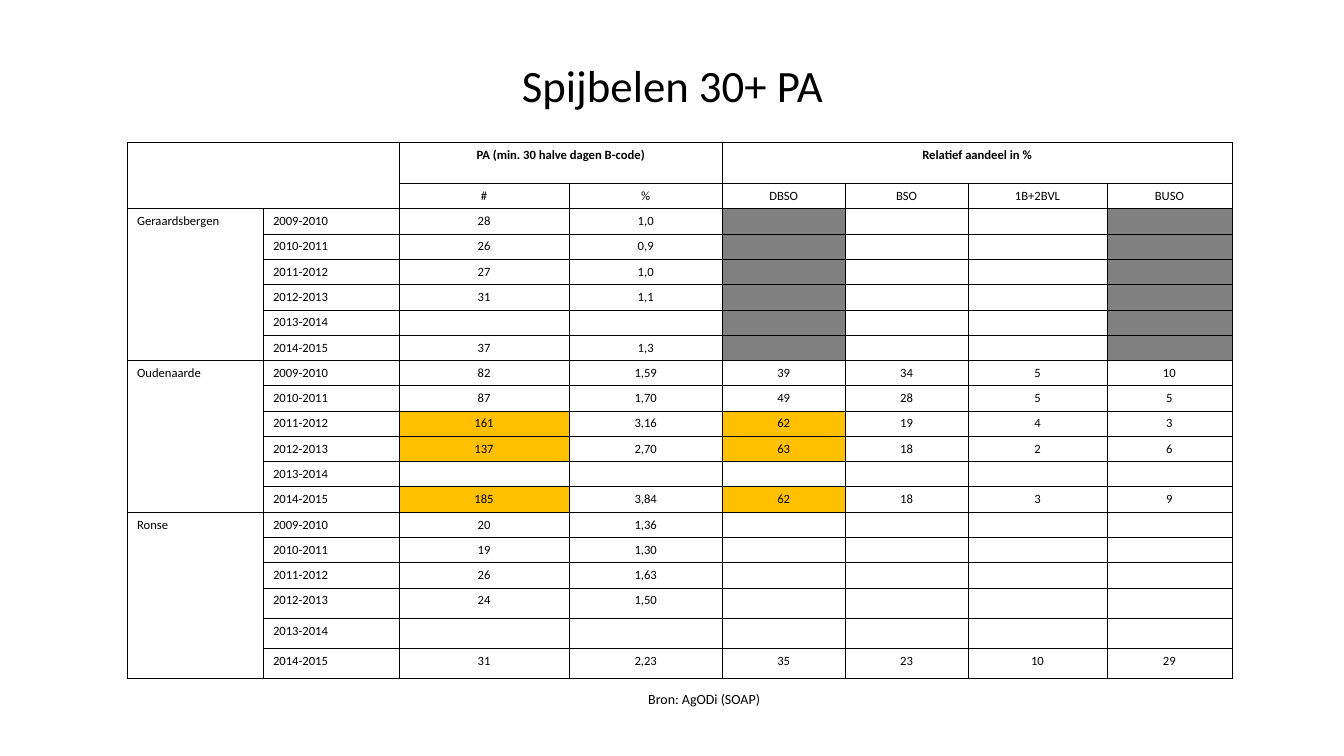
from lxml.etree import SubElement
from pptx import Presentation
from pptx.dml.color import RGBColor
from pptx.enum.text import MSO_ANCHOR, MSO_AUTO_SIZE, PP_ALIGN
from pptx.oxml.ns import qn
from pptx.util import Inches, Pt

COLORS = {"ink": "000000", "paper": "FFFFFF", "grey": "808080", "mark": "FFC000"}
FONT = "Calibri"
COLS = [1.35, 1.35, 1.69, 1.52, 1.22, 1.22, 1.38, 1.24]
ROWS = [0.41] + [0.25] * 16 + [0.3] * 3
HEADS = ["#", "%", "DBSO", "BSO", "1B+2BVL", "BUSO"]
YEARS = ["2009-2010", "2010-2011", "2011-2012", "2012-2013", "2013-2014", "2014-2015"]
TOWNS = {
    "Geraardsbergen": ["28 1,0", "26 0,9", "27 1,0", "31 1,1", "", "37 1,3"],
    "Oudenaarde": ["82 1,59 39 34 5 10", "87 1,70 49 28 5 5", "161 3,16 62 19 4 3",
                   "137 2,70 63 18 2 6", "", "185 3,84 62 18 3 9"],
    "Ronse": ["20 1,36", "19 1,30", "26 1,63", "24 1,50", "", "31 2,23 35 23 10 29"],
}
HIGH = {"161", "137", "185", "62", "63"}


def rgb(name):
    return RGBColor.from_string(COLORS[name])


def share(deck, left, top, width, height):
    wide, high = deck.slide_width / 100, deck.slide_height / 100
    return [int(left * wide), int(top * high), int(width * wide), int(height * high)]


def style(para, size, bold=False):
    for run in para.runs:
        run.font.name = FONT
        run.font.size = Pt(size)
        run.font.bold = bold
        run.font.color.rgb = rgb("ink")


def add_title(slide, box):
    frame = slide.shapes.add_textbox(*box).text_frame
    frame.word_wrap = True
    frame.vertical_anchor = MSO_ANCHOR.MIDDLE
    frame.text = "Spijbelen 30+ PA"
    para = frame.paragraphs[0]
    para.alignment = PP_ALIGN.CENTER
    para.line_spacing = 0.9
    style(para, 32)


def add_note(slide, box):
    frame = slide.shapes.add_textbox(*box).text_frame
    frame.word_wrap = False
    frame.auto_size = MSO_AUTO_SIZE.SHAPE_TO_FIT_TEXT
    frame.text = "Bron: AgODi (SOAP)"
    style(frame.paragraphs[0], 10)


def dress(cell, fill="paper"):
    props = cell._tc.get_or_add_tcPr()
    for side in ("a:lnL", "a:lnR", "a:lnT", "a:lnB"):
        line = SubElement(props, qn(side), w=str(Pt(0.5)))
        paint = SubElement(line, qn("a:solidFill"))
        SubElement(paint, qn("a:srgbClr"), val=COLORS["ink"])
    cell.fill.solid()
    cell.fill.fore_color.rgb = rgb(fill)


def write(cell, text, center=True, bold=False):
    cell.text = text
    para = cell.text_frame.paragraphs[0]
    if center:
        para.alignment = PP_ALIGN.CENTER
    style(para, 9, bold)
    if not text:
        SubElement(para._p, qn("a:endParaRPr"), sz="900")


def tone(town, col, text):
    if town == "Geraardsbergen" and col in (4, 7):
        return "grey"
    if town == "Oudenaarde" and col in (2, 4) and text in HIGH:
        return "mark"
    return "paper"


def add_grid(slide, box):
    table = slide.shapes.add_table(len(ROWS), len(COLS), *box).table
    table.first_row = table.horz_banding = False
    for col, size in zip(table.columns, COLS):
        col.width = int(box[2] * size / sum(COLS))
    for row, size in zip(table.rows, ROWS):
        row.height = int(box[3] * size / sum(ROWS))

    texts = [["", "", "PA (min. 30 halve dagen B-code)", "", "Relatief aandeel in %"],
             ["", ""] + HEADS]
    owners = [None, None]
    for town, lines in TOWNS.items():
        for year, line in zip(YEARS, lines):
            texts.append([town if year == YEARS[0] else "", year] + line.split())
            owners.append(town)

    for r, (town, line) in enumerate(zip(owners, texts)):
        for c in range(len(COLS)):
            text = line[c] if c < len(line) else ""
            cell = table.cell(r, c)
            write(cell, text, center=c > 1, bold=r == 0)
            dress(cell, tone(town, c, text))

    spans = [(0, 0, 1, 1), (0, 2, 0, 3), (0, 4, 0, 7)]
    step = len(YEARS)
    spans += [(2 + i * step, 0, 1 + (i + 1) * step, 0) for i in range(len(TOWNS))]
    for top, left, end, right in spans:
        table.cell(top, left).merge(table.cell(end, right))


def main():
    deck = Presentation()
    deck.slide_width, deck.slide_height = Inches(13.33), Inches(7.5)
    slide = deck.slides.add_slide(deck.slide_layouts[6])
    add_title(slide, share(deck, 6.9, 2, 86.27, 19.33))
    add_grid(slide, share(deck, 9.45, 18.8, 82.22, 70.8))
    add_note(slide, share(deck, 47.49, 90.67, 9.98, 3.6))
    deck.save("out.pptx")


if __name__ == "__main__":
    main()
